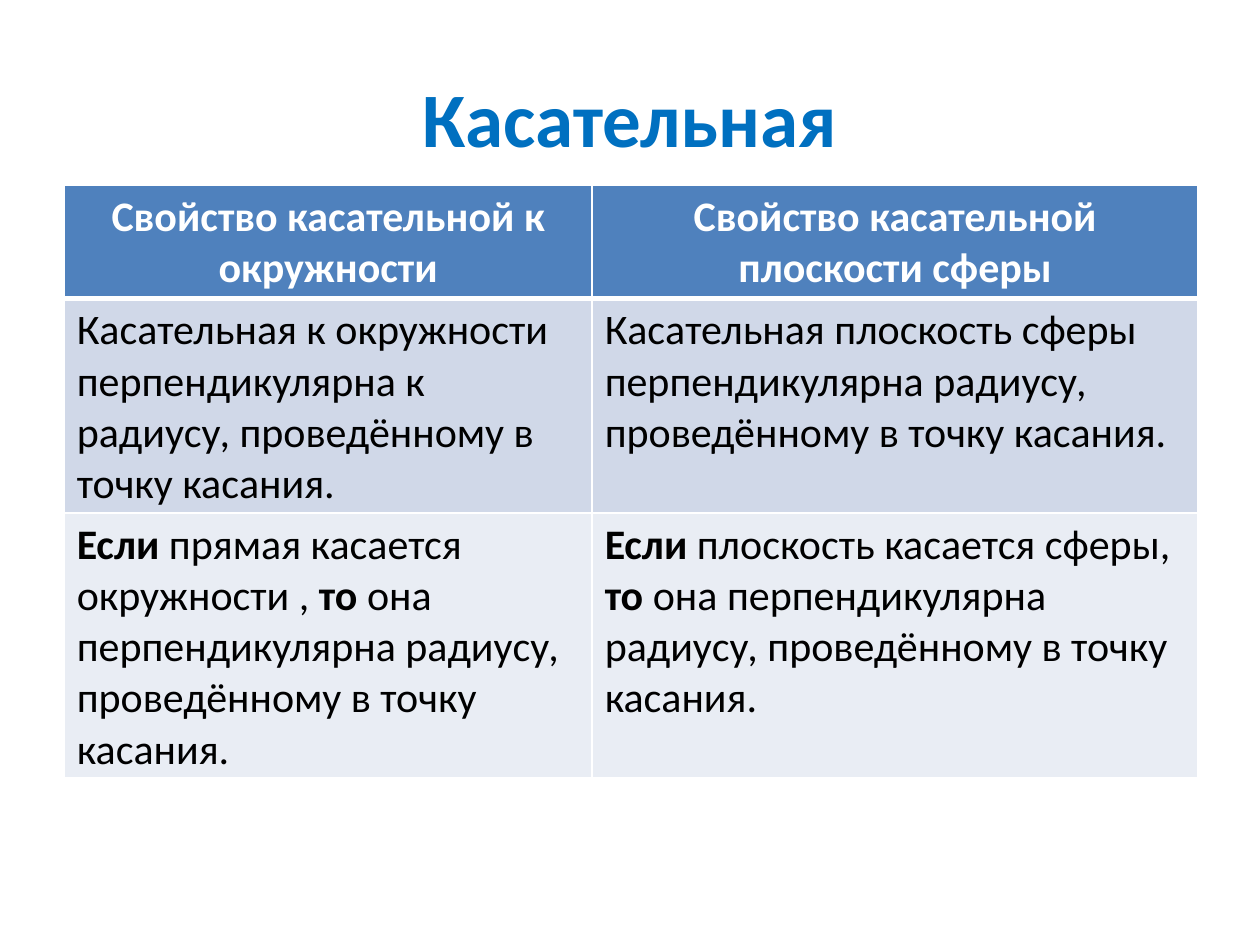
from dataclasses import dataclass

from lxml.etree import SubElement
from pptx import Presentation
from pptx.dml.color import RGBColor
from pptx.enum.text import MSO_ANCHOR, PP_ALIGN
from pptx.oxml.ns import qn
from pptx.util import Inches, Pt


@dataclass(frozen=True)
class Theme:
    font: str = "Calibri"
    title_size: int = 44
    table_size: int = 24
    title: str = "0070C0"
    header_text: str = "FFFFFF"
    body_text: str = "000000"
    border: str = "FFFFFF"
    row_fills: tuple = ("4F81BD", "D0D8E8", "E9EDF4")


THEME = Theme()
TITLE = "Касательная"
HEADERS = ["Свойство касательной к окружности", "Свойство касательной плоскости сферы"]
PROPERTIES = [
    "Касательная к окружности перпендикулярна к радиусу, проведённому в точку касания.",
    "Касательная плоскость сферы перпендикулярна радиусу, проведённому в точку касания.",
]
CONDITIONS = ["прямая касается окружности ,", "плоскость касается сферы,"]
CONCLUSION = " она перпендикулярна радиусу, проведённому в точку касания."
ROWS = [
    [[(header, True)] for header in HEADERS],
    [[(statement, False)] for statement in PROPERTIES],
    [
        [("Если", True), (f" {condition} ", False), ("то", True), (CONCLUSION, False)]
        for condition in CONDITIONS
    ],
]
COLUMN_WIDTHS = [4.19, 4.81]
ROW_HEIGHTS = [0.9, 1.7, 2.1]


def write_text(text_frame, runs, *, size, color, align):
    text_frame.word_wrap = True
    paragraph = text_frame.paragraphs[0]
    paragraph.alignment = align
    for text, bold in runs:
        run = paragraph.add_run()
        run.text = text
        run.font.name = THEME.font
        run.font.size = Pt(size)
        run.font.bold = bold
        run.font.color.rgb = RGBColor.from_string(color)


def set_borders(cell, **widths):
    properties = cell._tc.get_or_add_tcPr()
    for side in ("L", "R", "T", "B"):
        line = SubElement(properties, qn(f"a:ln{side}"), w=str(Pt(widths.get(side, 1))))
        fill = SubElement(line, qn("a:solidFill"))
        SubElement(fill, qn("a:srgbClr"), val=THEME.border)


def add_title(slide):
    box = slide.shapes.add_textbox(Inches(0.5), Inches(0.3), Inches(9), Inches(1.25))
    box.text_frame.vertical_anchor = MSO_ANCHOR.MIDDLE
    write_text(box.text_frame, [(TITLE, True)], size=THEME.title_size,
               color=THEME.title, align=PP_ALIGN.CENTER)


def add_comparison_table(slide):
    table = slide.shapes.add_table(
        len(ROWS), len(COLUMN_WIDTHS), Inches(0.51), Inches(1.47),
        Inches(sum(COLUMN_WIDTHS)), Inches(sum(ROW_HEIGHTS)),
    ).table
    for column, width in zip(table.columns, COLUMN_WIDTHS):
        column.width = Inches(width)
    for row, height in zip(table.rows, ROW_HEIGHTS):
        row.height = Inches(height)
    for row_index, row in enumerate(ROWS):
        is_header = row_index == 0
        for column_index, runs in enumerate(row):
            cell = table.cell(row_index, column_index)
            set_borders(cell, B=3 if is_header else 1, T=3 if row_index == 1 else 1)
            cell.fill.solid()
            cell.fill.fore_color.rgb = RGBColor.from_string(THEME.row_fills[row_index])
            write_text(
                cell.text_frame, runs, size=THEME.table_size,
                color=THEME.header_text if is_header else THEME.body_text,
                align=PP_ALIGN.CENTER if is_header else PP_ALIGN.LEFT,
            )


def main():
    presentation = Presentation()
    presentation.slide_width = Inches(10)
    presentation.slide_height = Inches(7.5)
    slide = presentation.slides.add_slide(presentation.slide_layouts[6])
    add_title(slide)
    add_comparison_table(slide)
    presentation.save("out.pptx")


if __name__ == "__main__":
    main()
